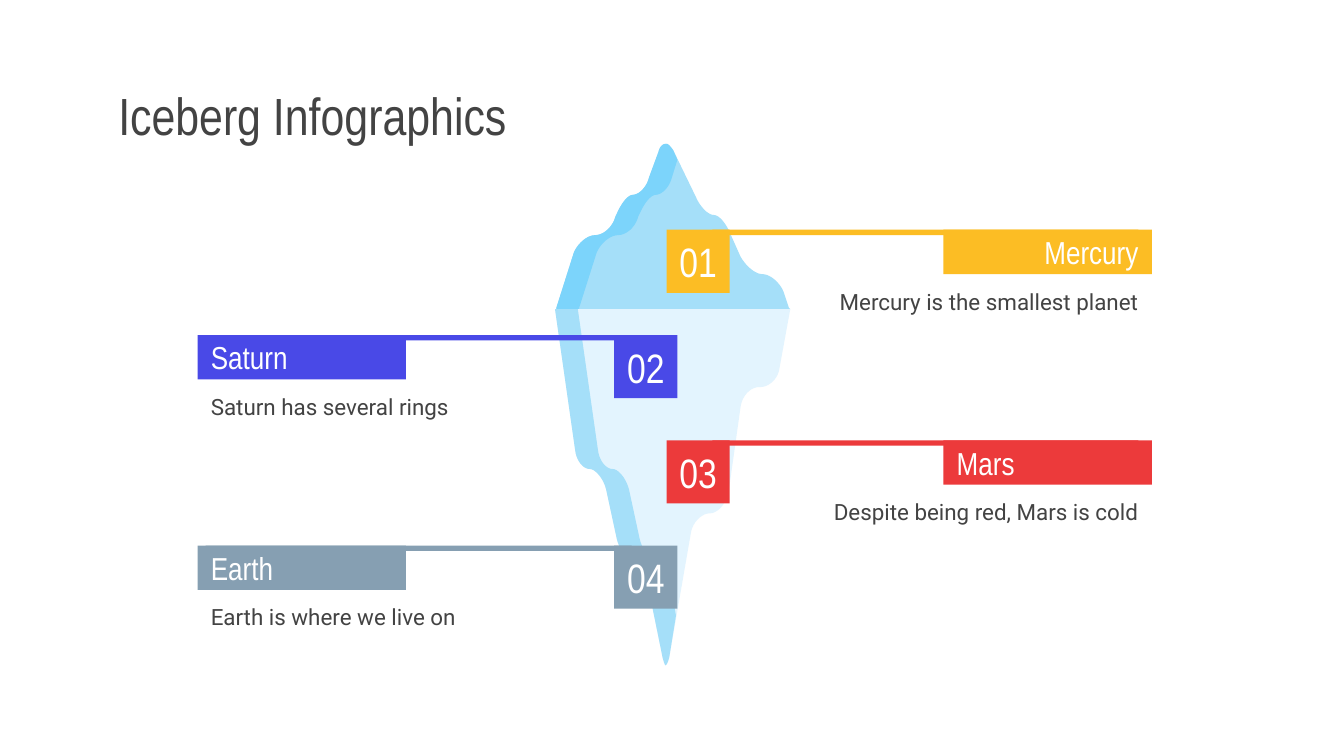
from pptx import Presentation
from pptx.dml.color import RGBColor
from pptx.enum.shapes import MSO_SHAPE as Shape
from pptx.enum.text import MSO_ANCHOR as Anchor, PP_ALIGN as Align
from pptx.util import Inches, Pt

# Content
TITLE = "Iceberg Infographics"
HEADING_FONT, BODY_FONT = "Arial Narrow", "Roboto"
DARK, WHITE = "434343", "FFFFFF"
# name, description, colour, side, name alignment
PLANETS = [
    ("Mercury", "Mercury is the smallest planet", "FCBD24", "right", Align.RIGHT),
    ("Saturn", "Saturn has several rings", "4949E7", "left", Align.LEFT),
    ("Mars", "Despite being red, Mars is cold", "EC3A3B", "right", Align.LEFT),
    ("Earth", "Earth is where we live on", "869FB2", "left", Align.LEFT),
]

# Slide of 16 to 9
SLIDE_WIDTH = 10
SLIDE_HEIGHT = SLIDE_WIDTH * 9 / 16

# Callout grid: left edge of each part by side, in inches
SIDES = {
    "left": dict(bar=1.53, name=1.47, number=4.57, note=1.47, align=Align.LEFT),
    "right": dict(bar=5.3, name=7.02, number=4.96, note=6.04, align=Align.RIGHT),
}
FIRST_TOP, LAST_TOP = 1.71, 4.06
ROW_PITCH = (LAST_TOP - FIRST_TOP) / (len(PLANETS) - 1)
BAR_WIDTH, BAR_HEIGHT = 3.17, 0.04
NAME_WIDTH, NAME_HEIGHT = 1.55, 0.33
NUMBER_SIZE = 0.47
NOTE_WIDTH, NOTE_HEIGHT = 2.53, 0.4

# Iceberg outlines: two numbers are a point, six are a Bezier curve
PEAK = [(5.01, 1.12), (4.99, 1.09, 4.97, 1.07, 4.96, 1.07),
        (4.93, 1.07, 4.91, 1.09, 4.9, 1.13)]
UPPER_EDGE = [(4.83, 1.32), (4.81, 1.4, 4.75, 1.45, 4.71, 1.45),
              (4.67, 1.45, 4.62, 1.52, 4.59, 1.59), (4.58, 1.61),
              (4.56, 1.69, 4.49, 1.75, 4.43, 1.75),
              (4.37, 1.75, 4.3, 1.81, 4.27, 1.88), (4.14, 2.29), (4.14, 2.3)]
UPPER_RIGHT = [(5.88, 2.3), (5.87, 2.29), (5.83, 2.17),
               (5.8, 2.1, 5.73, 2.04, 5.67, 2.04),
               (5.62, 2.04, 5.55, 1.98, 5.51, 1.91), (5.43, 1.73),
               (5.4, 1.66, 5.35, 1.6, 5.31, 1.6),
               (5.27, 1.6, 5.21, 1.54, 5.18, 1.47)]
LOWER_EDGE = [(4.13, 2.3), (4.28, 3.35), (4.29, 3.43, 4.34, 3.49, 4.39, 3.49),
              (4.43, 3.49, 4.49, 3.56, 4.51, 3.64), (4.59, 4.01),
              (4.61, 4.09, 4.66, 4.16, 4.7, 4.16),
              (4.75, 4.16, 4.8, 4.22, 4.81, 4.3)]
TIP = [(4.93, 4.89), (4.94, 4.93, 4.95, 4.95, 4.95, 4.95),
       (4.96, 4.95, 4.97, 4.93, 4.98, 4.89)]
LOWER_RIGHT = [(5.14, 3.97), (5.15, 3.89, 5.22, 3.82, 5.28, 3.82),
               (5.34, 3.82, 5.4, 3.75, 5.42, 3.67), (5.51, 3.03),
               (5.52, 2.95, 5.58, 2.88, 5.65, 2.88), (5.66, 2.88),
               (5.72, 2.88, 5.79, 2.82, 5.8, 2.74), (5.88, 2.3)]
SHADE_WIDTH = 0.17
CURVE_STEPS = 10


def rgb(colour):
    return RGBColor.from_string(colour)


def flatten(outline):
    """Turn points and curves into one list of points."""
    points = []
    for step in outline:
        if len(step) == 2:
            points.append(step)
            continue
        knots = [points[-1], step[:2], step[2:4], step[4:]]
        for i in range(1, CURVE_STEPS + 1):
            t = i / CURVE_STEPS
            weights = ((1 - t) ** 3, 3 * t * (1 - t) ** 2, 3 * t * t * (1 - t), t ** 3)
            points.append(tuple(sum(w * k[axis] for w, k in zip(weights, knots))
                                for axis in (0, 1)))
    return points


def inner(edge):
    """The edge moved right by the width of the shaded side, walked backwards."""
    return [(x + SHADE_WIDTH, y) for x, y in reversed(flatten(edge))]


def paint(shape, colour):
    shape.shadow.inherit = False
    shape.fill.solid()
    shape.fill.fore_color.rgb = rgb(colour)
    shape.line.fill.background()


def add_ice(slide, points, colour):
    points = [(Inches(x), Inches(y)) for x, y in points]
    builder = slide.shapes.build_freeform(*points[0])
    builder.add_line_segments(points[1:], close=True)
    paint(builder.convert_to_shape(), colour)


def write(shape, text, size, font, colour, align, side_inset=0.1):
    frame = shape.text_frame
    frame.word_wrap = True
    frame.vertical_anchor = Anchor.MIDDLE
    frame.margin_left = frame.margin_right = Inches(side_inset)
    frame.margin_top = frame.margin_bottom = Inches(0.1)
    para = frame.paragraphs[0]
    para.text = text
    para.alignment = align
    para.font.size = Pt(size)
    para.font.name = font
    para.font.color.rgb = rgb(colour)


def add_block(slide, left, top, width, height, colour):
    block = slide.shapes.add_shape(
        Shape.RECTANGLE, *map(Inches, (left, top, width, height)))
    paint(block, colour)
    return block


def add_callout(slide, index, name, note, colour, side, name_align):
    place = SIDES[side]
    top = FIRST_TOP + index * ROW_PITCH
    add_block(slide, place["bar"], top, BAR_WIDTH, BAR_HEIGHT, colour)
    label = add_block(slide, place["name"], top, NAME_WIDTH, NAME_HEIGHT, colour)
    write(label, name, 17, HEADING_FONT, WHITE, name_align)
    number = add_block(slide, place["number"], top, NUMBER_SIZE, NUMBER_SIZE, colour)
    write(number, f"{index + 1:02}", 22, HEADING_FONT, WHITE, Align.CENTER, 0)
    box = slide.shapes.add_textbox(
        *map(Inches, (place["note"], top + NAME_HEIGHT, NOTE_WIDTH, NOTE_HEIGHT)))
    write(box, note, 12, BODY_FONT, DARK, place["align"])


def main():
    deck = Presentation()
    deck.slide_width, deck.slide_height = Inches(SLIDE_WIDTH), Inches(SLIDE_HEIGHT)
    slide = deck.slides.add_slide(deck.slide_layouts[5])

    # Title
    title = slide.shapes.title
    title.left, title.top, title.width, title.height = map(
        Inches, (0.78, 0.59, 8.45, 0.53))
    write(title, TITLE, 28, HEADING_FONT, DARK, Align.LEFT)

    # Iceberg above and below the water, each face followed by its shaded side
    above = flatten(PEAK + UPPER_EDGE)
    below = flatten(LOWER_EDGE + TIP)
    add_ice(slide, above + flatten(UPPER_RIGHT), "A5DFF9")
    add_ice(slide, above + inner(UPPER_EDGE) + [(5.04, 1.19)], "7CD4FB")
    add_ice(slide, below + flatten(LOWER_RIGHT), "E3F4FE")
    add_ice(slide, below + [(5.03, 4.58)] + inner(LOWER_EDGE), "A5DFF9")

    # Callouts
    for index, planet in enumerate(PLANETS):
        add_callout(slide, index, *planet)

    deck.save("out.pptx")


if __name__ == "__main__":
    main()
